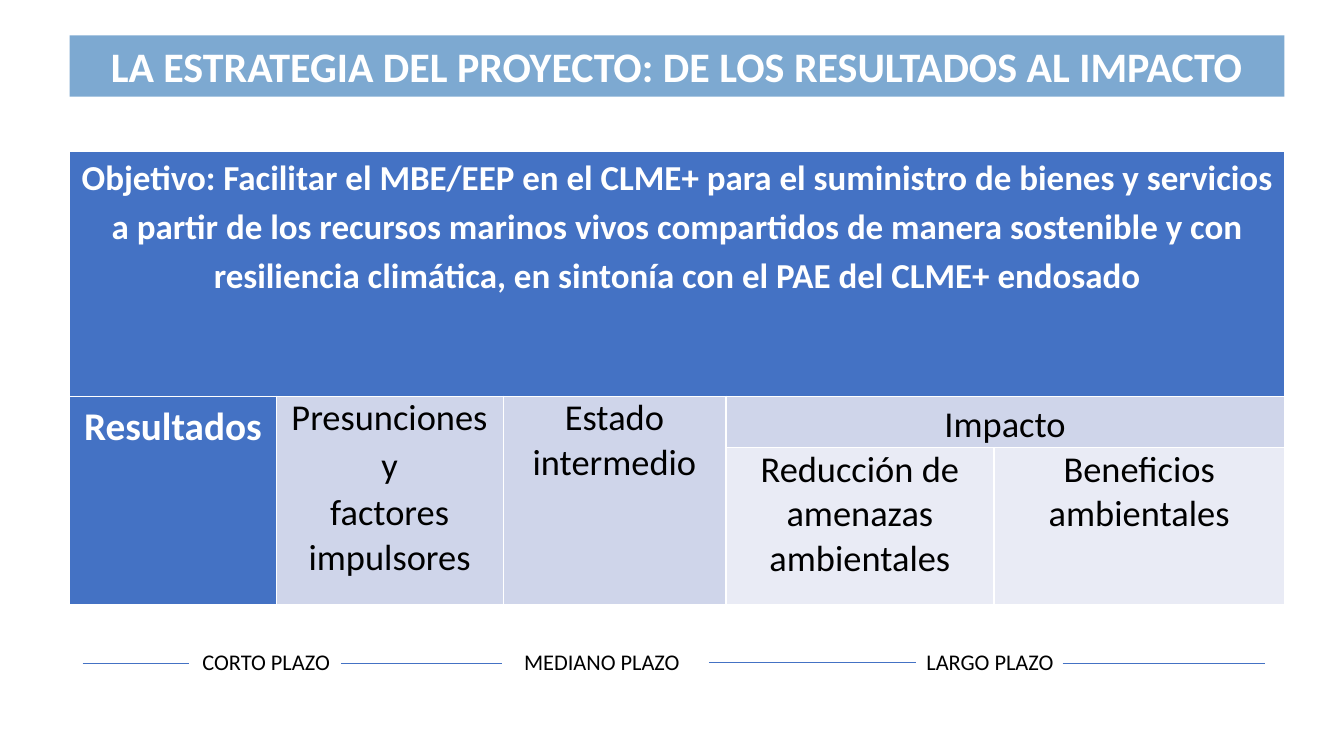
from lxml.etree import SubElement
from pptx import Presentation
from pptx.dml.color import RGBColor
from pptx.enum.shapes import MSO_CONNECTOR
from pptx.enum.text import MSO_ANCHOR, MSO_AUTO_SIZE, PP_ALIGN
from pptx.oxml.ns import qn
from pptx.util import Inches, Pt

WHITE = RGBColor(0xFF, 0xFF, 0xFF)
BLACK = RGBColor(0x00, 0x00, 0x00)
TITLE_BLUE = RGBColor(0x2E, 0x75, 0xB6)
BLUE = RGBColor(0x44, 0x72, 0xC4)
LIGHT_BLUE = RGBColor(0xCF, 0xD5, 0xEA)
PALE_BLUE = RGBColor(0xE9, 0xEB, 0xF5)

LEFT, WIDTH = 0.69, 12.05
COLUMNS = [2.05, 2.25, 2.21, 2.66, 2.88]
ROWS = [2.43, 0.5, 1.56]


def format_runs(paragraph, size, color, bold=False):
    for run in paragraph.runs:
        run.font.name = "Calibri"
        run.font.size = Pt(size)
        run.font.bold = bold
        run.font.color.rgb = color


presentation = Presentation()
presentation.slide_width = Inches(13.33)
presentation.slide_height = Inches(7.5)
slide = presentation.slides.add_slide(presentation.slide_layouts[5])

# Title on a translucent band
title = slide.shapes.title
title.left, title.top = Inches(LEFT), Inches(0.35)
title.width, title.height = Inches(WIDTH), Inches(0.61)
title.fill.solid()
title.fill.fore_color.rgb = TITLE_BLUE
band_color = title.fill._xPr.find(qn("a:solidFill"))[0]
SubElement(band_color, qn("a:alpha")).set("val", "62000")
title.text_frame.text = "LA ESTRATEGIA DEL PROYECTO: DE LOS RESULTADOS AL IMPACTO"
title.text_frame.auto_size = MSO_AUTO_SIZE.NONE
title.text_frame.vertical_anchor = MSO_ANCHOR.TOP
title.text_frame.paragraphs[0].alignment = PP_ALIGN.CENTER
format_runs(title.text_frame.paragraphs[0], 30, WHITE, True)

# Table grid; its style supplies the white borders
table = slide.shapes.add_table(
    len(ROWS), len(COLUMNS), Inches(LEFT), Inches(1.5), Inches(WIDTH), Inches(sum(ROWS))
).table
for column, width in zip(table.columns, COLUMNS):
    column.width = Inches(width)
for row, height in zip(table.rows, ROWS):
    row.height = Inches(height)

# Cells: row, column, last row, last column, text, size, fill, wide spacing
objective = (
    "Objetivo: Facilitar el MBE/EEP en el CLME+ para el suministro de bienes y servicios "
    "a partir de los recursos marinos vivos compartidos de manera sostenible y con "
    "resiliencia climática, en sintonía con el PAE del CLME+ endosado"
)
cells = [
    (0, 0, 0, 4, objective, 25, BLUE, True),
    (1, 0, 2, 0, "Resultados", 28, BLUE, True),
    (1, 1, 2, 1, "Presunciones\ny\nfactores impulsores", 26, LIGHT_BLUE, False),
    (1, 2, 2, 2, "Estado intermedio", 26, LIGHT_BLUE, False),
    (1, 3, 1, 4, "Impacto", 26, LIGHT_BLUE, True),
    (2, 3, 2, 3, "Reducción de amenazas ambientales", 26, PALE_BLUE, False),
    (2, 4, 2, 4, "Beneficios ambientales", 26, PALE_BLUE, False),
]
for row, column, last_row, last_column, text, size, fill, wide in cells:
    cell = table.cell(row, column)
    if (row, column) != (last_row, last_column):
        cell.merge(table.cell(last_row, last_column))
    cell.fill.solid()
    cell.fill.fore_color.rgb = fill
    cell.margin_left = cell.margin_right = Inches(0.07)
    cell.margin_top = cell.margin_bottom = 0
    cell.text_frame.text = text
    heading = fill == BLUE
    for paragraph in cell.text_frame.paragraphs:
        paragraph.alignment = PP_ALIGN.CENTER
        paragraph.space_after = Pt(10 if wide else 2)
        if wide:
            paragraph.line_spacing = 1.15
        format_runs(paragraph, size, WHITE if heading else BLACK, heading)

# Time scale: labels
for text, left, width in [
    ("CORTO PLAZO", 1.91, 2.02),
    ("MEDIANO PLAZO", 5.1, 1.93),
    ("LARGO PLAZO", 9.09, 1.56),
]:
    label = slide.shapes.add_textbox(Inches(left), Inches(6.38), Inches(width), Inches(0.37))
    label.text_frame.word_wrap = True
    label.text_frame.text = text
    format_runs(label.text_frame.paragraphs[0], 16, BLACK)

# Time scale: lines between the labels
for start, end, y in [
    (0.82, 1.87, 6.58),
    (3.38, 4.98, 6.58),
    (7.03, 9.09, 6.57),
    (10.54, 12.55, 6.58),
]:
    line = slide.shapes.add_connector(
        MSO_CONNECTOR.STRAIGHT, Inches(start), Inches(y), Inches(end), Inches(y)
    )
    line.line.color.rgb = BLUE
    line.line.width = Pt(0.5)
    SubElement(line._element.spPr, qn("a:effectLst"))

presentation.save("out.pptx")
